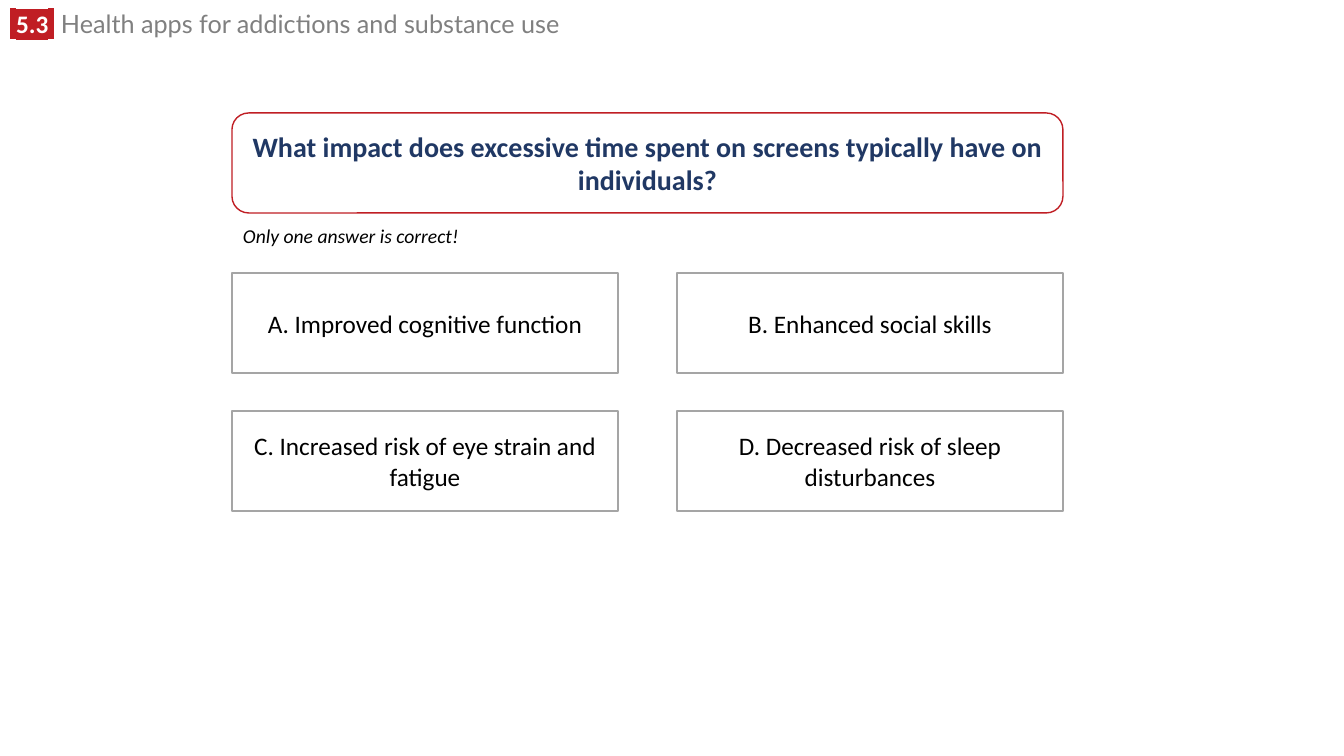
from lxml.etree import SubElement
from pptx import Presentation
from pptx.dml.color import RGBColor
from pptx.enum.shapes import MSO_SHAPE
from pptx.enum.text import MSO_ANCHOR, MSO_AUTO_SIZE, PP_ALIGN
from pptx.oxml.ns import qn
from pptx.util import Pt

# Content
RED, NAVY, GREY, BORDER = "C01E24", "203864", "808080", "A5A5A5"
BADGE = dict(color="FFFFFF", bold=True, highlight=RED)
HEADING = [
    (" ", dict(font="Lato", **BADGE)),
    ("5.3", BADGE),
    (" ", dict(font="Lato", **BADGE)),
    (" Health apps for addictions and substance use",
     dict(font="Lato", color=GREY, bold=False)),
]
QUESTION = "What impact does excessive time spent on screens typically have on individuals?"
HINT = "Only one answer is correct!"
ANSWERS = [
    "A. Improved cognitive function",
    "B. Enhanced social skills",
    "C. Increased risk of eye strain and fatigue",
    "D. Decreased risk of sleep disturbances",
]

# Layout in px
SLIDE_W, SLIDE_H = 1344, 756
EMU_PER_PX = 12192000 / SLIDE_W
LEFT, QUESTION_W, BOX_H = 232, 831, 100
ANSWER_W, ANSWER_TOP, ROW_STEP = 386, 273, 138
COLUMN_STEP = QUESTION_W - ANSWER_W


def px(*lengths):
    return [round(length * EMU_PER_PX) for length in lengths]


def rgb(value):
    return RGBColor.from_string(value)


def write(paragraph, text, font="Calibri", size=18, color="000000",
          bold=False, italic=False, highlight=None):
    run = paragraph.add_run()
    run.text = text
    run.font.name, run.font.size = font, Pt(size)
    run.font.bold, run.font.italic = bold, italic
    run.font.color.rgb = rgb(color)
    if highlight:
        properties = run.font._element
        mark = SubElement(properties, qn("a:highlight"))
        SubElement(mark, qn("a:srgbClr"), val=highlight)
        properties.find(qn("a:latin")).addprevious(mark)


def add_box(kind, place, line, text, **style):
    box = slide.shapes.add_shape(kind, *px(*place))
    box.shadow.inherit = False
    box.fill.solid()
    box.fill.fore_color.rgb = rgb("FFFFFF")
    box.line.color.rgb = rgb(line)
    box.line.width = Pt(1)
    frame = box.text_frame
    frame.word_wrap = True
    frame.vertical_anchor = MSO_ANCHOR.MIDDLE
    frame.paragraphs[0].alignment = PP_ALIGN.CENTER
    write(frame.paragraphs[0], text, **style)


deck = Presentation()
deck.slide_width, deck.slide_height = px(SLIDE_W, SLIDE_H)
slide = deck.slides.add_slide(deck.slide_layouts[5])

# Heading with its section number
heading = slide.shapes.title
heading.left, heading.top, heading.width, heading.height = px(0, 9, 960, 35)
heading_frame = heading.text_frame
heading_frame.word_wrap = True
heading_frame.auto_size = MSO_AUTO_SIZE.SHAPE_TO_FIT_TEXT
heading_frame.vertical_anchor = MSO_ANCHOR.TOP
heading_line = heading_frame.paragraphs[0]
heading_line.alignment = PP_ALIGN.LEFT
heading_line.line_spacing = 0.8
for part, style in HEADING:
    write(heading_line, part, **style)

# Question
add_box(MSO_SHAPE.ROUNDED_RECTANGLE, (LEFT, 113, QUESTION_W, BOX_H), RED,
        QUESTION, size=20, color=NAVY, bold=True)

# Hint
hint = slide.shapes.add_textbox(*px(LEFT + 1, 219, 238, 34))
hint.text_frame.word_wrap = False
hint.text_frame.auto_size = MSO_AUTO_SIZE.SHAPE_TO_FIT_TEXT
write(hint.text_frame.paragraphs[0], HINT, size=14, italic=True)

# Answers, two to a row
for index, answer in enumerate(ANSWERS):
    row, column = divmod(index, 2)
    place = (LEFT + column * COLUMN_STEP, ANSWER_TOP + row * ROW_STEP, ANSWER_W, BOX_H)
    add_box(MSO_SHAPE.RECTANGLE, place, BORDER, answer)

deck.save("out.pptx")
